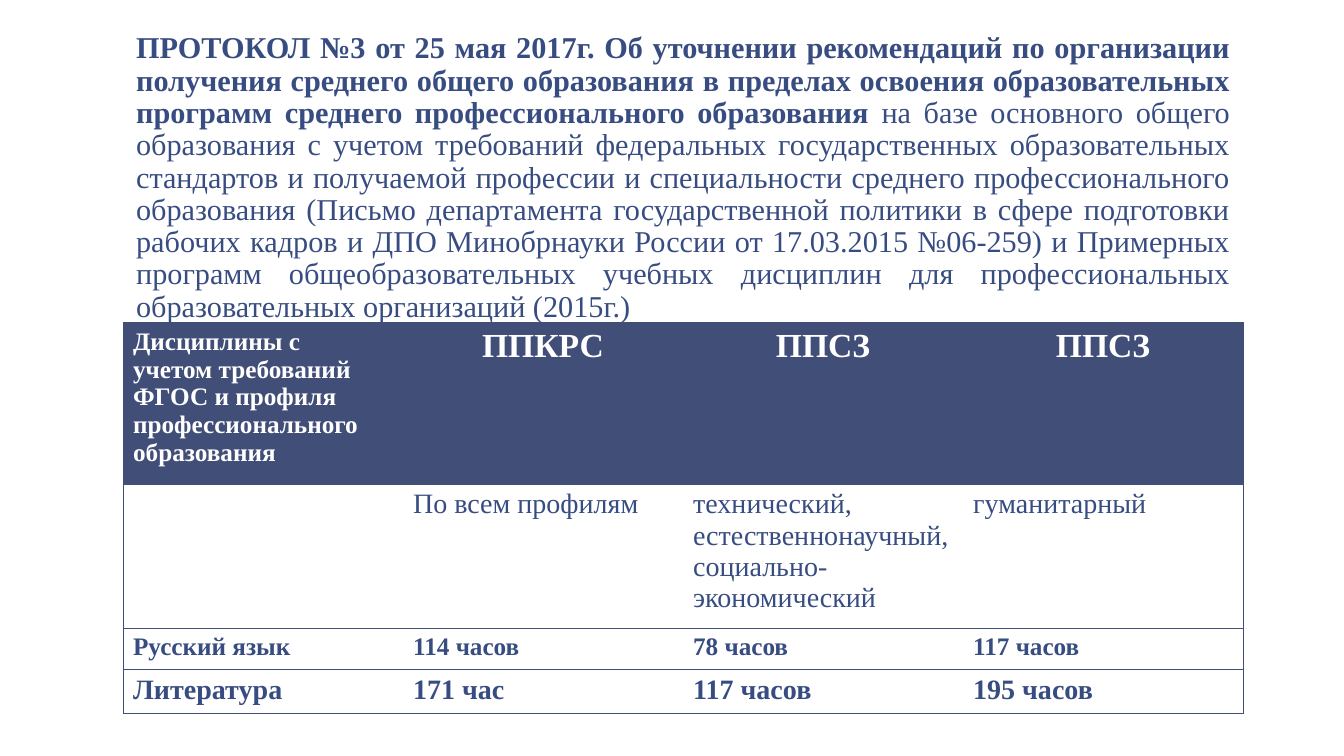
from lxml import etree
from pptx import Presentation
from pptx.dml.color import RGBColor
from pptx.enum.text import MSO_ANCHOR, PP_ALIGN
from pptx.oxml.ns import qn
from pptx.util import Inches, Pt

BOTTOM = MSO_ANCHOR.BOTTOM
LEFT, CENTER, JUSTIFY = PP_ALIGN.LEFT, PP_ALIGN.CENTER, PP_ALIGN.JUSTIFY

COLORS = {"text": "374C81", "header": "414E77", "white": "FFFFFF"}
FONT = "Times New Roman"

TITLE_BOLD = (
    "ПРОТОКОЛ №3 от 25 мая 2017г. Об уточнении рекомендаций по организации "
    "получения среднего общего образования в пределах освоения образовательных "
    "программ среднего профессионального образования "
)
TITLE_PLAIN = (
    "на базе основного общего образования с учетом требований федеральных "
    "государственных образовательных стандартов и получаемой профессии и "
    "специальности среднего профессионального образования (Письмо департамента "
    "государственной политики в сфере подготовки рабочих кадров и ДПО Минобрнауки "
    "России от 17.03.2015 №06-259) и Примерных программ общеобразовательных учебных "
    "дисциплин для профессиональных образовательных организаций (2015г.)"
)

# Each cell is a list of its paragraphs
HOURS = [
    [["Дисциплины с", "учетом требований", "ФГОС и профиля",
      "профессионального", "образования"], ["ППКРС"], ["ППСЗ"], ["ППСЗ"]],
    [[], ["По всем профилям"],
     ["технический,", "естественнонаучный,", "социально-", "экономический"],
     ["гуманитарный"]],
    [["Русский язык"], ["114 часов"], ["78 часов"], ["117 часов"]],
    [["Литература"], ["171 час"], ["117 часов"], ["195 часов"]],
]
ROW_HEIGHTS = [1.6, 1.33, 0.41, 0.41]
ROW_SIZES = [24, 20, 18, 20]
CORNER_SIZE = 18


class SlideBuilder:
    def __init__(self, presentation):
        self.slide = presentation.slides.add_slide(presentation.slide_layouts[6])
        self.slide.background.fill.solid()
        self.slide.background.fill.fore_color.rgb = self.color("white")

    def color(self, name):
        return RGBColor.from_string(COLORS[name])

    def add_run(self, paragraph, text, size, color, bold):
        run = paragraph.add_run()
        run.text = text
        run.font.name = FONT
        run.font.size = Pt(size)
        run.font.bold = bold
        run.font.color.rgb = self.color(color)

    def add_title(self, left, top, width, height, runs, size):
        box = self.slide.shapes.add_textbox(
            Inches(left), Inches(top), Inches(width), Inches(height))
        frame = box.text_frame
        frame.word_wrap = True
        frame.vertical_anchor = BOTTOM
        frame.margin_left = frame.margin_right = Inches(0.13)
        frame.margin_top = frame.margin_bottom = Inches(0.07)
        paragraph = frame.paragraphs[0]
        paragraph.alignment = JUSTIFY
        paragraph.line_spacing = 0.89
        for text, bold in runs:
            self.add_run(paragraph, text, size, "text", bold)

    def set_borders(self, cell, visible_sides):
        properties = cell._tc.get_or_add_tcPr()
        for index, side in enumerate(("lnL", "lnR", "lnT", "lnB")):
            line = etree.Element(qn(f"a:{side}"), w=str(Pt(0.5)))
            if side in visible_sides:
                fill = etree.SubElement(line, qn("a:solidFill"))
                etree.SubElement(fill, qn("a:srgbClr"), val=COLORS["header"])
            else:
                etree.SubElement(line, qn("a:noFill"))
            properties.insert(index, line)

    def fill_cell(self, cell, lines, size, color, bold, alignment):
        for index, line in enumerate(lines):
            frame = cell.text_frame
            paragraph = frame.add_paragraph() if index else frame.paragraphs[0]
            paragraph.alignment = alignment
            self.add_run(paragraph, line, size, color, bold)

    def add_hours_table(self, left, top, width, rows):
        columns = len(rows[0])
        table = self.slide.shapes.add_table(
            len(rows), columns, Inches(left), Inches(top),
            Inches(width), Inches(sum(ROW_HEIGHTS))).table
        for row, height in zip(table.rows, ROW_HEIGHTS):
            row.height = Inches(height)
        for row_index, row in enumerate(rows):
            is_header = row_index == 0
            for column_index, lines in enumerate(row):
                cell = table.cell(row_index, column_index)
                is_first = column_index == 0
                if is_header:
                    cell.fill.solid()
                    cell.fill.fore_color.rgb = self.color("header")
                else:
                    cell.fill.background()
                sides = ["lnT", "lnB"]
                if is_first:
                    sides.append("lnL")
                if column_index == columns - 1:
                    sides.append("lnR")
                self.set_borders(cell, sides)
                self.fill_cell(
                    cell, lines,
                    CORNER_SIZE if is_header and is_first else ROW_SIZES[row_index],
                    "white" if is_header else "text",
                    row_index != 1,
                    CENTER if is_header and not is_first else LEFT)


def main():
    presentation = Presentation()
    presentation.slide_width = Inches(13.33)
    presentation.slide_height = Inches(7.5)
    builder = SlideBuilder(presentation)

    # Protocol heading
    builder.add_title(1.22, 0.08, 11.11, 3.2,
                      [(TITLE_BOLD, True), (TITLE_PLAIN, False)], 21.6)

    # Hours by discipline and profile
    builder.add_hours_table(1.22, 3.2, 11.11, HOURS)

    presentation.save("out.pptx")


if __name__ == "__main__":
    main()
